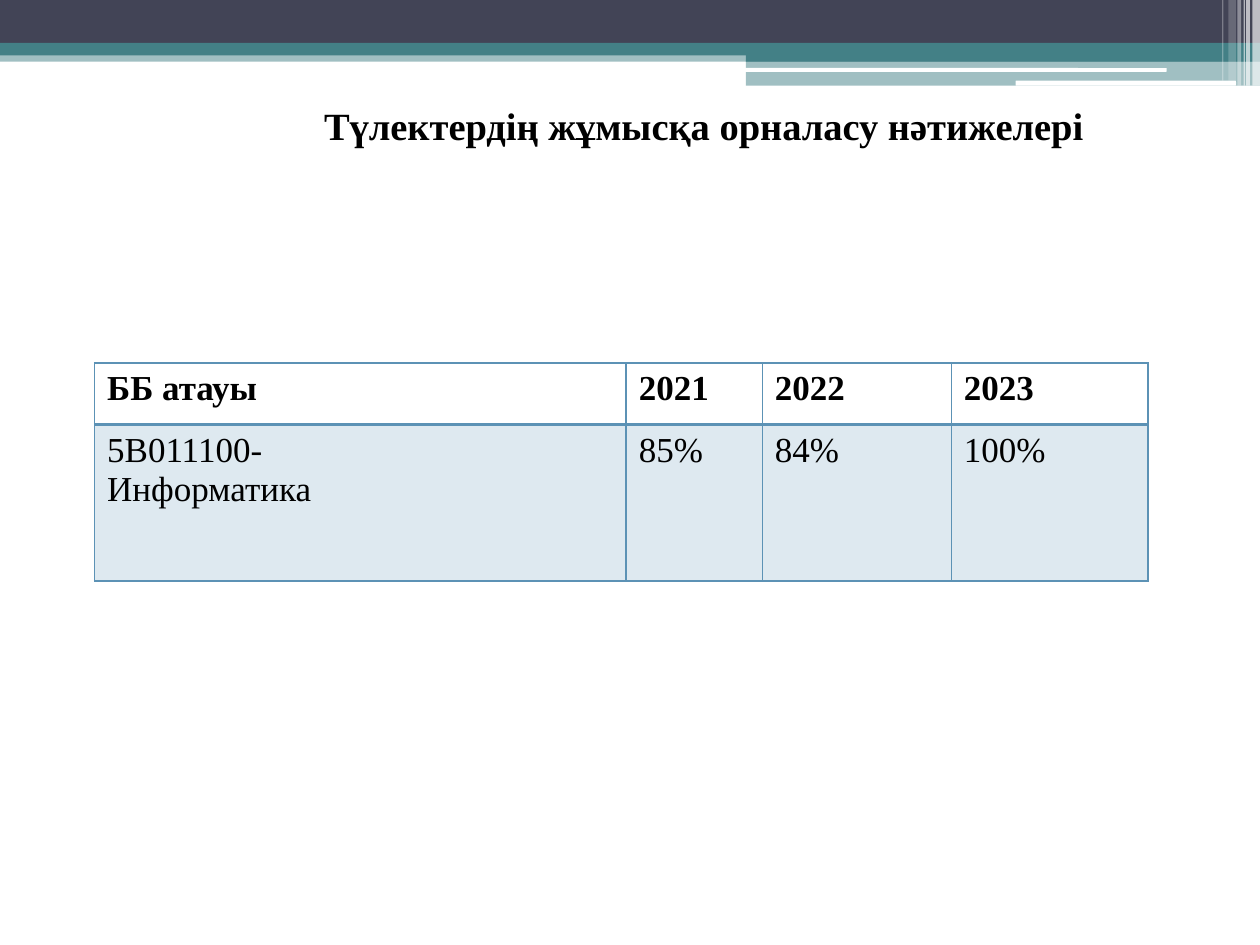
from lxml import etree
from pptx import Presentation
from pptx.dml.color import RGBColor
from pptx.enum.shapes import MSO_SHAPE
from pptx.enum.text import MSO_AUTO_SIZE, PP_ALIGN
from pptx.oxml.ns import qn
from pptx.util import Inches, Pt

RECT, ROUND = MSO_SHAPE.RECTANGLE, MSO_SHAPE.ROUNDED_RECTANGLE
CENTER, JUSTIFY, LEFT = PP_ALIGN.CENTER, PP_ALIGN.JUSTIFY, PP_ALIGN.LEFT
FIT_SHAPE = MSO_AUTO_SIZE.SHAPE_TO_FIT_TEXT

NAVY = RGBColor(0x42, 0x44, 0x56)
TEAL = RGBColor(0x43, 0x80, 0x86)
BLUE = RGBColor(0x5C, 0x92, 0xB5)
WHITE = RGBColor(0xFF, 0xFF, 0xFF)
BLACK = RGBColor(0, 0, 0)
FONT = "Times New Roman"
SLIDE_W, SLIDE_H = 10, 7.5

# Content
TITLE = "Түлектердің жұмысқа орналасу нәтижелері"
ROWS = [
    ["ББ атауы", "2021", "2022", "2023"],
    ["5В011100-\nИнформатика", "85%", "84%", "100%"],
]
COL_WIDTHS = [4.22, 1.08, 1.5, 1.56]
ROW_HEIGHTS = [0.49, 1.24]

# Header bands: shape, left, top, width, height, colour, opacity %
SPLIT = 5.92
BANDS = [
    (RECT, 0, 0.4, SLIDE_W, 0.09, TEAL, 50),
    (RECT, 0, 0, SLIDE_W, 0.34, NAVY, 100),
    (RECT, 0, 0.34, SLIDE_W, 0.1, TEAL, 100),
    (RECT, SPLIT, 0.39, SLIDE_W - SPLIT, 0.1, TEAL, 100),
    (RECT, SPLIT, 0.48, SLIDE_W - SPLIT, 0.2, TEAL, 50),
    (ROUND, 5.91, 0.54, 3.35, 0.03, WHITE, 100),
    (ROUND, 8.06, 0.64, 1.75, 0.04, WHITE, 100),
]
# Vertical stripes in the corner: left, width, height, opacity %
STRIPES = [
    (9.94, 0.06, 0.68, 65),
    (9.89, 0.03, 0.68, 65),
    (9.87, 0.01, 0.68, 60),
    (9.82, 0.03, 0.68, 40),
    (9.75, 0.06, 0.64, 20),
    (9.7, 0.01, 0.64, 30),
]


def set_fill(fill, color, opacity=100):
    fill.solid()
    fill.fore_color.rgb = color
    if opacity < 100:
        clr = fill._xPr.find(qn("a:solidFill"))[0]
        etree.SubElement(clr, qn("a:alpha"), val=str(opacity * 1000))


def add_band(s, kind, left, top, width, height, color, opacity):
    sp = s.shapes.add_shape(kind, Inches(left), Inches(top), Inches(width), Inches(height))
    sp.shadow.inherit = False
    sp.line.fill.background()
    set_fill(sp.fill, color, opacity)


def set_text(tf, text, size, bold, align):
    tf.text = text
    for p in tf.paragraphs:
        p.alignment = align
        for r in p.runs:
            r.font.name, r.font.size, r.font.bold = FONT, Pt(size), bold
            r.font.color.rgb = BLACK


def set_borders(cell, widths):
    tcPr = cell._tc.get_or_add_tcPr()
    for i, (side, width) in enumerate(widths.items()):
        ln = etree.Element(qn(f"a:ln{side}"), w=str(Pt(width)))
        solid = etree.SubElement(ln, qn("a:solidFill"))
        etree.SubElement(solid, qn("a:srgbClr"), val=str(BLUE))
        tcPr.insert(i, ln)


def add_results_table(s, left, top):
    frame = s.shapes.add_table(len(ROWS), len(COL_WIDTHS), Inches(left), Inches(top),
                               Inches(sum(COL_WIDTHS)), Inches(sum(ROW_HEIGHTS)))
    table = frame.table
    table.horz_banding = False
    for column, width in zip(table.columns, COL_WIDTHS):
        column.width = Inches(width)
    for row, height in zip(table.rows, ROW_HEIGHTS):
        row.height = Inches(height)
    for i, texts in enumerate(ROWS):
        header = i == 0
        for j, text in enumerate(texts):
            cell = table.cell(i, j)
            set_text(cell.text_frame, text, 20, header, LEFT if header else JUSTIFY)
            if header:
                cell.fill.background()
            else:
                set_fill(cell.fill, BLUE, 20)
            # The rule under the header is twice as heavy
            set_borders(cell, {"L": 1, "R": 1, "T": 1 if header else 2, "B": 2 if header else 1})


def main():
    prs = Presentation()
    prs.slide_width, prs.slide_height = Inches(SLIDE_W), Inches(SLIDE_H)
    s = prs.slides.add_slide(prs.slide_layouts[6])

    # Header decoration
    for band in BANDS:
        add_band(s, *band)
    for left, width, height, opacity in STRIPES:
        add_band(s, RECT, left, 0, width, height, WHITE, opacity)

    # Title
    tf = s.shapes.add_textbox(Inches(2.08), Inches(0.76), Inches(7.01), Inches(0.47)).text_frame
    tf.word_wrap = True
    tf.auto_size = FIT_SHAPE
    set_text(tf, TITLE, 22, True, CENTER)

    # Employment results
    add_results_table(s, 0.75, 2.88)
    prs.save("out.pptx")


if __name__ == "__main__":
    main()
